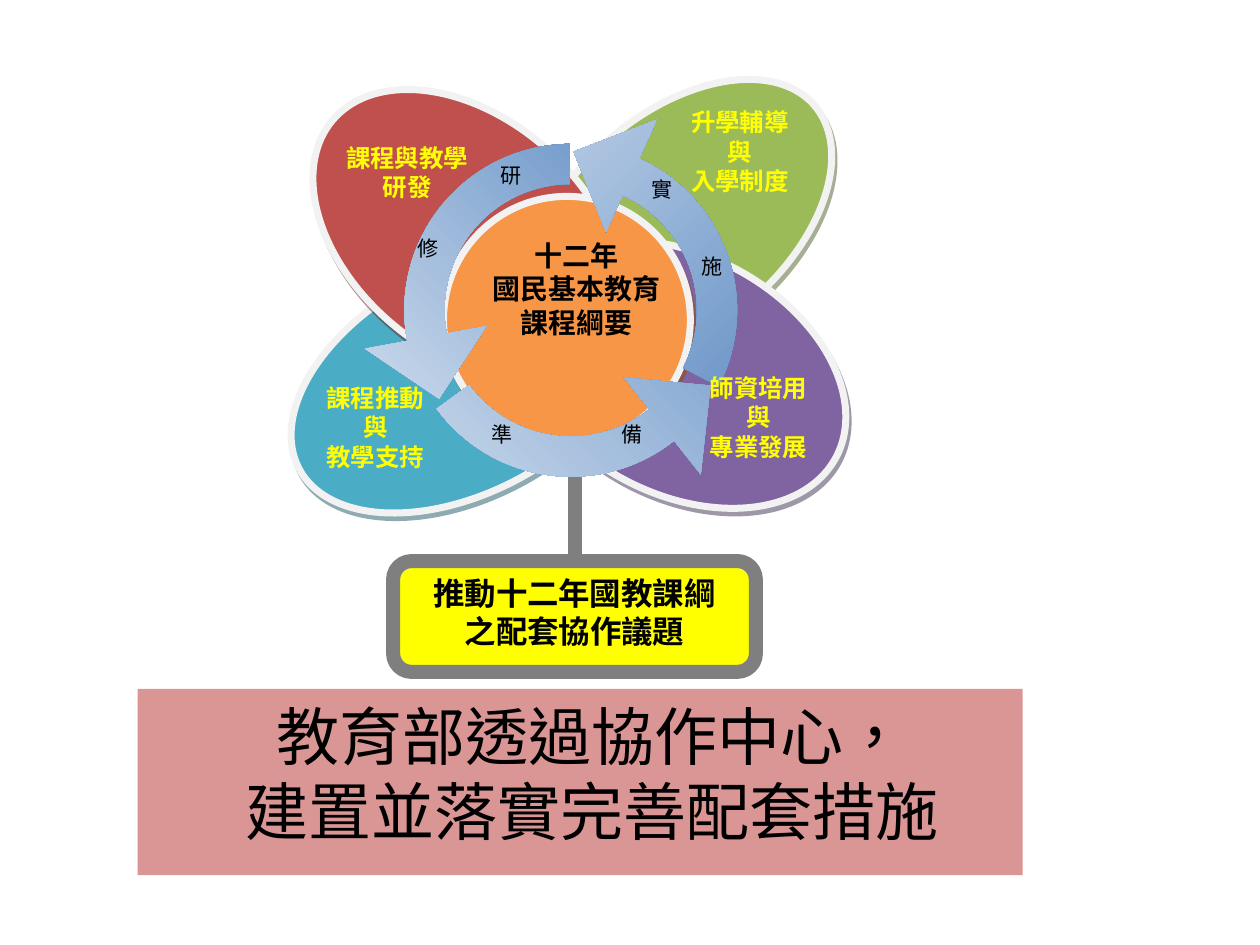
from math import cos, radians, sin, tan

from lxml import etree
from pptx import Presentation
from pptx.dml.color import RGBColor
from pptx.enum.shapes import MSO_CONNECTOR, MSO_SHAPE
from pptx.enum.text import MSO_ANCHOR, PP_ALIGN
from pptx.oxml.ns import qn
from pptx.util import Pt

OVAL = MSO_SHAPE.OVAL
RECTANGLE = MSO_SHAPE.RECTANGLE
ROUNDED = MSO_SHAPE.ROUNDED_RECTANGLE
STRAIGHT = MSO_CONNECTOR.STRAIGHT
TOP = MSO_ANCHOR.TOP
MIDDLE = MSO_ANCHOR.MIDDLE
CENTER = PP_ALIGN.CENTER

THEME = {
    "font": "Noto Sans CJK SC",
    "black": "000000", "yellow": "FFFF00", "gray": "7F7F7F", "rim": "F2F2F2",
    "banner": "D99694", "arrow_dark": "4F81BD", "arrow_light": "DCE6F2",
    "green": ("9BBB59", "4E6128"), "purple": ("8064A2", "3F3151"),
    "teal": ("4BACC6", "205867"), "red": ("C0504D", "622423"),
    "orange": ("F79646", "974706"),
    "step": 9, "petal": 10.5, "core": 12, "topic": 13.5, "title": 27,
}


def add_shape(kind, bounds, fill, line=None, weight=0):
    shape = slide.shapes.add_shape(kind, *[Pt(value) for value in bounds])
    shape.fill.solid()
    shape.fill.fore_color.rgb = RGBColor.from_string(fill)
    if line:
        shape.line.color.rgb = RGBColor.from_string(line)
        shape.line.width = Pt(weight)
    else:
        shape.line.fill.background()
    shape.shadow.inherit = False
    return shape


def write(shape, text, size, color, bold=False, anchor=TOP, bottom=3.6):
    frame = shape.text_frame
    frame_format = {"word_wrap": True, "vertical_anchor": anchor,
                    "margin_left": 0, "margin_right": 0,
                    "margin_top": Pt(3.6), "margin_bottom": Pt(bottom)}
    for name, value in frame_format.items():
        setattr(frame, name, value)
    for index, line in enumerate(text.split("\n")):
        para = frame.add_paragraph() if index else frame.paragraphs[0]
        para.text = line
        para.alignment = CENTER
        para.line_spacing = Pt(size * 1.2)
        for span in para.runs:
            font_format = {"name": THEME["font"], "size": Pt(size), "bold": bold}
            for name, value in font_format.items():
                setattr(span.font, name, value)
            span.font.color.rgb = RGBColor.from_string(color)
            span.font._element.set("lang", "zh-TW")
            etree.SubElement(span.font._element, qn("a:ea"), typeface=THEME["font"])


deck = Presentation()
deck.slide_width, deck.slide_height = Pt(540), Pt(405)
slide = deck.slides.add_slide(deck.slide_layouts[6])

stem = slide.shapes.add_connector(STRAIGHT, Pt(246.3), Pt(187), Pt(246.3), Pt(242))
stem.line.color.rgb = RGBColor.from_string(THEME["gray"])
stem.line.width = Pt(6)
etree.SubElement(stem._element.spPr, qn("a:effectLst"))

ovals = [
    ("green", (216, 48.2, 151.2, 92.2), 319.6),
    ("purple", (216, 109.4, 151.2, 102.2), 28),
    ("teal", (118.8, 115.2, 161.3, 95.8), 332),
    ("red", (124.6, 50.4, 151.2, 100.1), 40.4),
    ("orange", (190.1, 84.2, 105.8, 105.8), 0),
]
for color, bounds, turn in ovals:
    fill, shade = THEME[color]
    oval = add_shape(OVAL, bounds, fill, THEME["rim"], 3)
    oval.rotation = turn
    effects = oval._element.spPr.find(qn("a:effectLst"))
    shadow = etree.SubElement(effects, qn("a:outerShdw"), dist=str(Pt(2.2)),
                              dir=str(63 * 60000), algn="ctr", rotWithShape="0")
    tint = etree.SubElement(shadow, qn("a:srgbClr"), val=shade)
    etree.SubElement(tint, qn("a:alpha"), val="50000")

ring_x, ring_y = 244.6, 133
inner, outer, head_inner, head_outer, tip_radius = 54.1, 71.3, 36.7, 89.7, 68
arrows = [(117.2, 24.3, 113.9, 135), (359.6, 259.4, 348.3, 225), (233.7, 141.6, 231.2, 225)]
for tail, neck, turn, gradient_angle in arrows:
    half = (neck - tail) / 2
    stretch = 4 / 3 * tan(radians(half / 4))
    reach = (1 + stretch ** 2) ** 0.5
    lean = half / 4
    bend = 0
    middle = tail + half
    segments = [("moveTo", [(outer, tail)])]
    arcs = []
    for radius, stops in ((outer, (tail, middle, neck)), (inner, (neck, middle, tail))):
        edge = []
        for start, end in zip(stops, stops[1:]):
            pull = 4 / 3 * tan(radians((end - start) / 4))
            edge.append(("cubicBezTo", [(radius, start, pull), (radius, end, -pull),
                                        (radius, end)]))
        arcs.append(edge)
    head = [("lnTo", [(head_outer, neck)]), ("lnTo", [(tip_radius, neck - 23.3)]),
            ("lnTo", [(head_inner, neck)]), ("lnTo", [(inner, neck)])]
    segments += arcs[0] + head + arcs[1]

    arrow = slide.shapes.build_freeform().add_line_segments([(1, 1)]).convert_to_shape()
    placement = {"left": Pt(ring_x - outer), "top": Pt(ring_y - outer),
                 "width": Pt(2 * outer), "height": Pt(2 * outer), "rotation": turn}
    for name, value in placement.items():
        setattr(arrow, name, value)
    outline = arrow._element.spPr.find(".//" + qn("a:path"))
    for child in list(outline):
        outline.remove(child)
    outline.set("w", str(Pt(2 * outer)))
    outline.set("h", str(Pt(2 * outer)))
    for command, points in segments:
        segment = etree.SubElement(outline, qn("a:" + command))
        for radius, angle, *pull in points:
            theta = radians(angle - turn)
            tangent = pull[0] if pull else 0
            x = outer + radius * (sin(theta) + tangent * cos(theta))
            y = outer - radius * (cos(theta) - tangent * sin(theta))
            etree.SubElement(segment, qn("a:pt"), x=str(Pt(x)), y=str(Pt(y)))
    etree.SubElement(outline, qn("a:close"))
    arrow.shadow.inherit = False
    arrow.line.fill.background()
    arrow.fill.gradient()
    arrow.fill.gradient_angle = (gradient_angle + turn) % 360
    for stop, color in zip(arrow.fill.gradient_stops, ("arrow_dark", "arrow_light")):
        stop.color.rgb = RGBColor.from_string(THEME[color])

labels = [
    ("十二年\n國民基本教育\n課程綱要", (200.2, 98.6, 93.6, 65.5), "core", "black"),
    ("課程與教學\n研發", (136.1, 57.6, 77, 40.3), "petal", "yellow"),
    ("課程推動\n與\n教學支持", (122.4, 160.6, 77, 48.2), "petal", "yellow"),
    ("師資培用\n與\n專業發展", (286.6, 156.2, 77, 54.7), "petal", "yellow"),
    ("升學輔導\n與\n入學制度", (278.6, 42.5, 77, 43.9), "petal", "yellow"),
    ("修", (166.3, 97.2, 34.6, 65.5), "step", "black"),
    ("實", (266.4, 72, 34.6, 28.1), "step", "black"),
    ("研", (201.6, 66.2, 34.6, 23.8), "step", "black"),
    ("施", (288, 105.1, 34.6, 27.4), "step", "black"),
    ("準", (198, 177.1, 34.6, 25.2), "step", "black"),
    ("備", (253.4, 177.1, 34.6, 25.2), "step", "black"),
]
for text, bounds, role, color in labels:
    box = slide.shapes.add_textbox(*[Pt(value) for value in bounds])
    write(box, text, THEME[role], THEME[color], bold=role != "step")

topic = add_shape(ROUNDED, (168.5, 240.5, 155.5, 47.5), THEME["yellow"], THEME["gray"], 6)
write(topic, "推動十二年國教課綱\n之配套協作議題", THEME["topic"], THEME["black"], True, MIDDLE, 7.2)

banner = add_shape(RECTANGLE, (59, 295.2, 379.4, 79.9), THEME["banner"])
write(banner, "教育部透過協作中心，\v建置並落實完善配套措施", THEME["title"], THEME["black"],
      anchor=MIDDLE, bottom=11.3)
banner.text_frame.paragraphs[0]._p.get_or_add_pPr().set("marL", str(Pt(10)))

deck.save("out.pptx")
